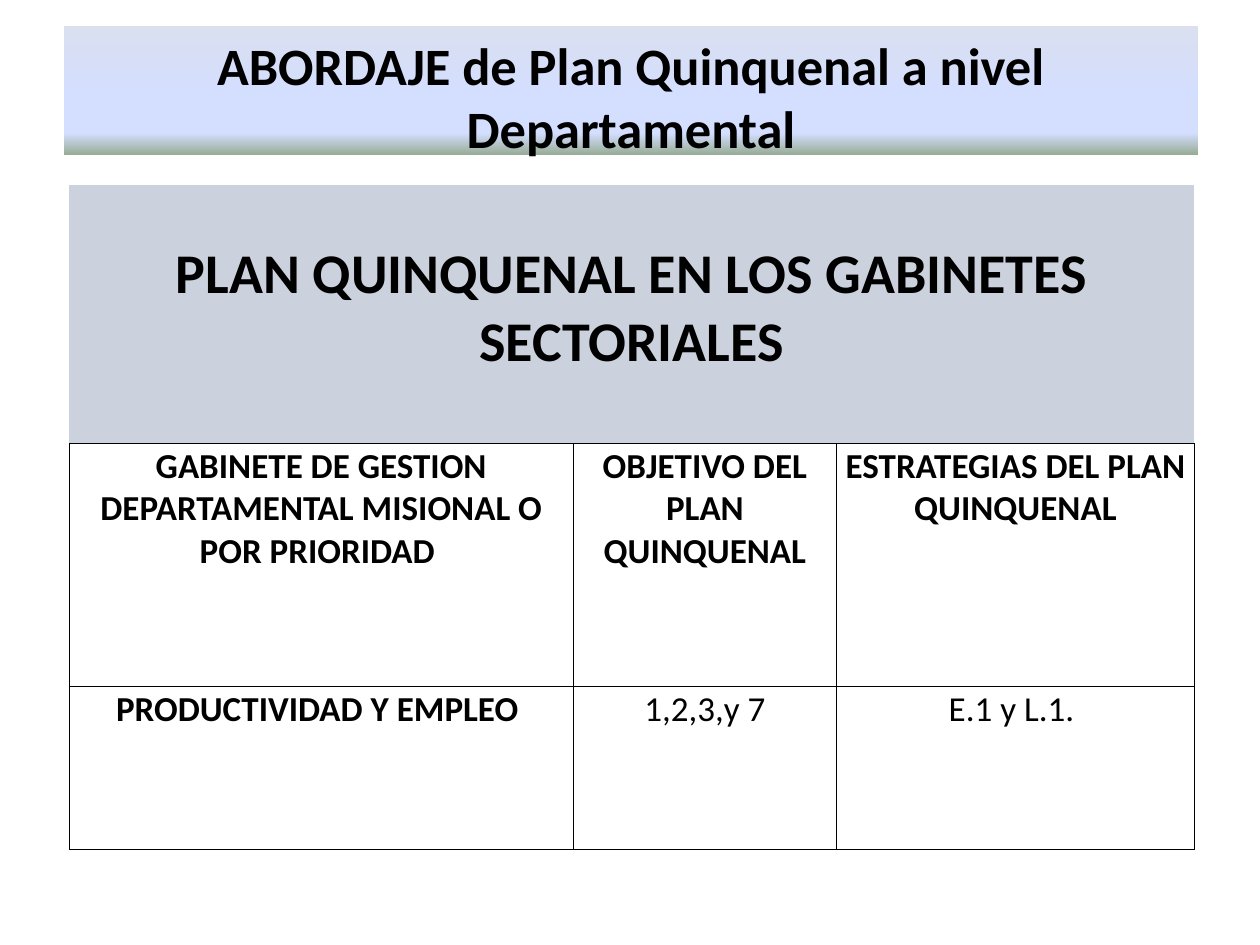
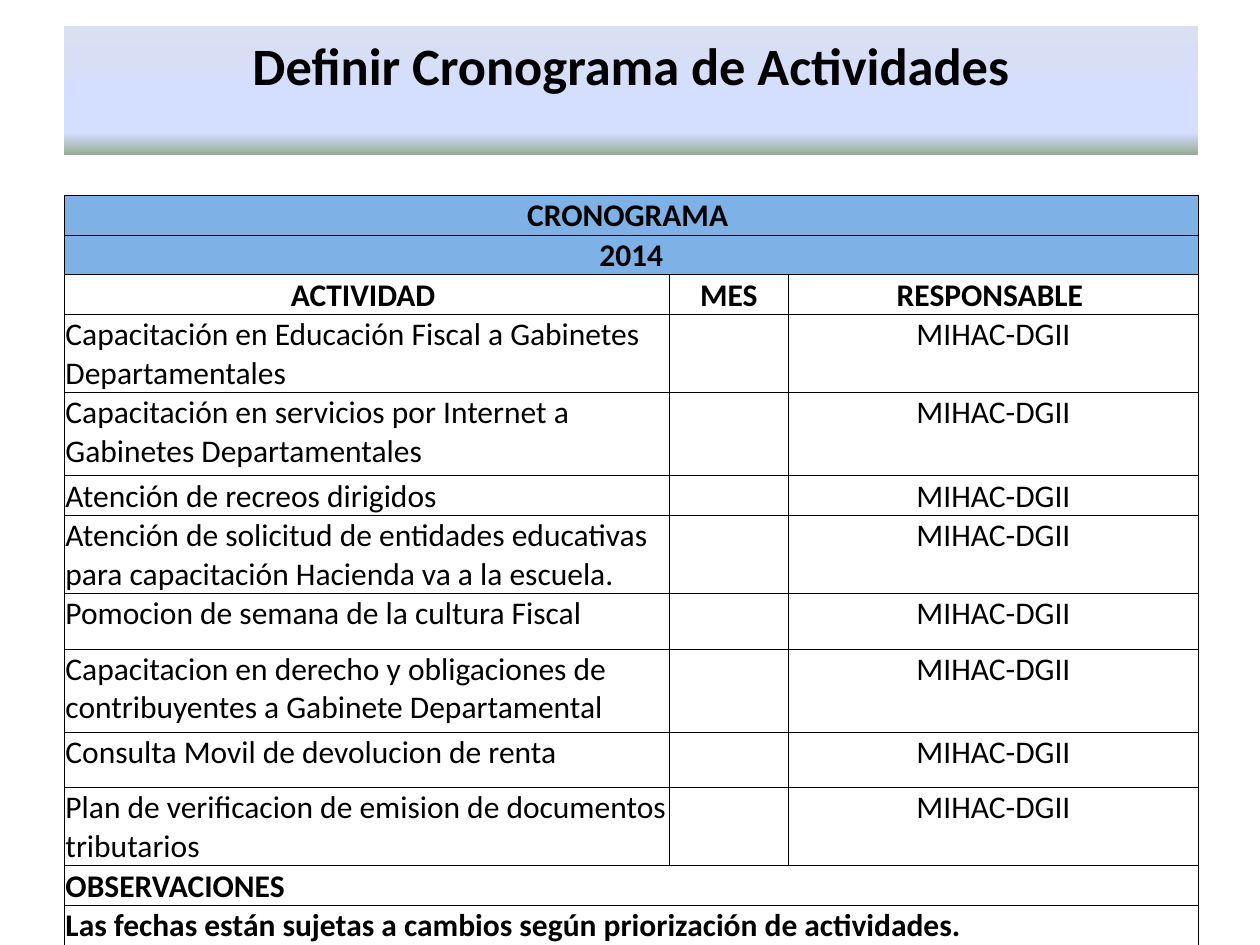
from dataclasses import dataclass

from lxml.etree import SubElement
from pptx import Presentation
from pptx.dml.color import RGBColor
from pptx.enum.shapes import MSO_SHAPE
from pptx.enum.text import MSO_ANCHOR, PP_ALIGN
from pptx.oxml import parse_xml
from pptx.oxml.ns import nsdecls, qn
from pptx.util import Inches, Pt

FONT = "Calibri"
BLACK, WHITE = "000000", "FFFFFF"
HEADING_GREY, SCHEDULE_BLUE = "CCD2DD", "7EB2E6"
BAND_STOPS = [(0, "DAE0EF"), (53, "D4DEFF"), (83, "D4DEFF"), (100, "96AB94")]

MARGIN, BAND_WIDTH = 0.51, 9.0
BAND_TOP, BAND_HEIGHT = 0.21, 1.02
ONE_LINE, TWO_LINES = 0.31, 0.61
LOOSE_ONE, LOOSE_TWO = 0.44, 0.66
ALL_SIDES = "LRTB"
OFFICE = "MIHAC-DGII"


@dataclass
class Row:
    """One table row; a single text spans every column."""
    height: float
    texts: list[str]
    size: int = 18
    bold: tuple[bool, ...] = (True, True, True)
    centered: tuple[bool, ...] = (True, True, True)
    fill: str = WHITE
    borders: str = ALL_SIDES
    anchor: MSO_ANCHOR = MSO_ANCHOR.TOP
    space_below: float = 0.0


@dataclass
class Grid:
    left: float
    top: float
    columns: list[float]
    rows: list[Row]


def rgb(color: str) -> RGBColor:
    return RGBColor.from_string(color)


def style_paragraph(paragraph, size: int, bold: bool, centered: bool) -> None:
    paragraph.alignment = PP_ALIGN.CENTER if centered else PP_ALIGN.LEFT
    font = paragraph.font
    font.name, font.size, font.bold = FONT, Pt(size), bold
    font.color.rgb = rgb(BLACK)


def add_title_band(slide, title: str) -> None:
    band = slide.shapes.add_shape(
        MSO_SHAPE.RECTANGLE, Inches(MARGIN), Inches(BAND_TOP),
        Inches(BAND_WIDTH), Inches(BAND_HEIGHT))
    band.shadow.inherit = False
    band.line.fill.background()
    band.fill.gradient()
    band.fill.gradient_angle = 270
    stops = band._element.spPr.find(".//" + qn("a:gsLst"))
    stops.clear()
    for position, color in BAND_STOPS:
        stop = SubElement(stops, qn("a:gs"), pos=str(position * 1000))
        SubElement(stop, qn("a:srgbClr"), val=color)
    frame = band.text_frame
    frame.word_wrap = True
    frame.vertical_anchor = MSO_ANCHOR.TOP
    frame.text = title
    style_paragraph(frame.paragraphs[0], 30, True, True)


def set_borders(cell, sides: str) -> None:
    """Draw thin black lines on the given sides and none on the others."""
    properties = cell._tc.get_or_add_tcPr()
    for index, side in enumerate(ALL_SIDES):
        paint = (f'<a:solidFill><a:srgbClr val="{BLACK}"/></a:solidFill>'
                 if side in sides else "<a:noFill/>")
        properties.insert(index, parse_xml(
            f'<a:ln{side} {nsdecls("a")} w="{Pt(0.5)}">{paint}</a:ln{side}>'))


def fill_row(table, index: int, row: Row) -> None:
    table.rows[index].height = Inches(row.height)
    cells = list(table.rows[index].cells)
    if len(row.texts) == 1:
        cells[0].merge(cells[-1])
    for column, cell in enumerate(cells):
        cell.margin_left = cell.margin_right = cell.margin_top = Inches(0.01)
        cell.margin_bottom = Inches(row.space_below)
        cell.vertical_anchor = row.anchor
        cell.fill.solid()
        cell.fill.fore_color.rgb = rgb(row.fill)
        set_borders(cell, row.borders)
        if column < len(row.texts):
            cell.text = row.texts[column]
        style_paragraph(cell.text_frame.paragraphs[0], row.size,
                        row.bold[column], row.centered[column])


def add_grid(slide, grid: Grid) -> None:
    height = sum(row.height for row in grid.rows)
    table = slide.shapes.add_table(
        len(grid.rows), len(grid.columns), Inches(grid.left), Inches(grid.top),
        Inches(sum(grid.columns)), Inches(height)).table
    table.first_row = table.horz_banding = False
    for column, width in zip(table.columns, grid.columns):
        column.width = Inches(width)
    for index, row in enumerate(grid.rows):
        fill_row(table, index, row)


def activity(height: float, text: str) -> Row:
    return Row(height, [text, "", OFFICE], bold=(False,) * 3,
               centered=(False, True, True))


def remark(text: str) -> Row:
    return Row(ONE_LINE, [text], centered=(False,) * 3)


CABINETS = Grid(0.55, 1.47, [4.0, 2.09, 2.84], [
    Row(2.05, ["PLAN QUINQUENAL EN LOS GABINETES SECTORIALES"], size=32,
        fill=HEADING_GREY, borders="B", anchor=MSO_ANCHOR.BOTTOM,
        space_below=0.53),
    Row(1.93, ["GABINETE DE GESTION DEPARTAMENTAL MISIONAL O POR PRIORIDAD ",
               "OBJETIVO DEL PLAN QUINQUENAL",
               "ESTRATEGIAS DEL PLAN QUINQUENAL"], size=20),
    Row(1.29, ["PRODUCTIVIDAD Y EMPLEO ", "1,2,3,y 7", "E.1 y L.1. "],
        size=20, bold=(True, False, False)),
])

SCHEDULE = Grid(MARGIN, 1.55, [4.8, 0.95, 3.25], [
    Row(ONE_LINE, ["CRONOGRAMA "], fill=SCHEDULE_BLUE),
    Row(ONE_LINE, ["2014"], fill=SCHEDULE_BLUE),
    Row(ONE_LINE, ["ACTIVIDAD ", "MES", "RESPONSABLE "]),
    activity(TWO_LINES, "Capacitación en Educación Fiscal a Gabinetes Departamentales"),
    activity(LOOSE_TWO, "Capacitación en servicios por Internet a Gabinetes Departamentales"),
    activity(ONE_LINE, "Atención de recreos dirigidos"),
    activity(TWO_LINES, "Atención de solicitud de entidades educativas para "
                        "capacitación Hacienda va a la escuela."),
    activity(LOOSE_ONE, "Pomocion de semana de la cultura Fiscal"),
    activity(LOOSE_TWO, "Capacitacion en derecho y obligaciones de "
                        "contribuyentes a Gabinete Departamental"),
    activity(LOOSE_ONE, "Consulta Movil de devolucion de renta"),
    activity(TWO_LINES, "Plan de verificacion de emision de documentos tributarios"),
    remark("OBSERVACIONES"),
    remark("Las fechas están sujetas a cambios según priorización de actividades."),
])

SLIDES = [
    ("ABORDAJE de Plan Quinquenal a nivel Departamental", CABINETS),
    ("Definir Cronograma de Actividades", SCHEDULE),
]


def main() -> None:
    presentation = Presentation()
    presentation.slide_width, presentation.slide_height = Inches(10), Inches(7.5)
    for title, grid in SLIDES:
        slide = presentation.slides.add_slide(presentation.slide_layouts[6])
        add_grid(slide, grid)
        add_title_band(slide, title)
    presentation.save("out.pptx")


if __name__ == "__main__":
    main()
